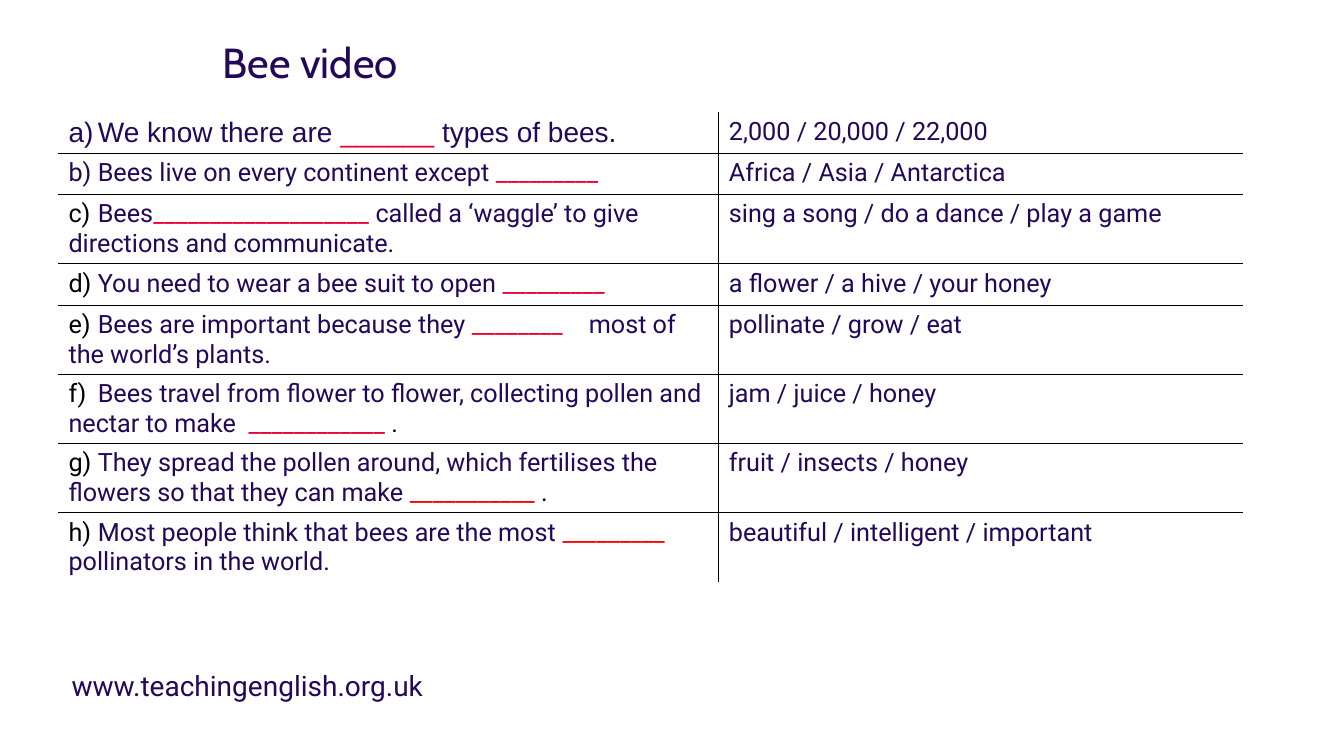
import pptx
import pptx.util
import pptx.dml.color
import pptx.enum.text
import pptx.oxml
import pptx.oxml.ns
from pptx.util import Inches

# Content: each clue is (runs, choices); a run is (text, colour name)
title = "Bee video"
site = "www.teachingenglish.org.uk"
clues = [
    ([("a)\tWe know there are ", "ink"), ("______", "gap"),
      (" types of bees.", "ink")], "2,000 / 20,000 / 22,000"),
    ([("b)\tBees live on every continent except ", "ink"),
      ("_________", "gap")], "Africa / Asia / Antarctica"),
    ([("c)\t", "black"), ("Bees", "ink"), ("___________________", "gap"),
      (" called a ‘waggle’ to give directions and communicate.", "ink")],
     "sing a song / do a dance / play a game"),
    ([("d)\t", "black"), ("You need to wear a bee suit to open ", "ink"),
      ("_________", "gap")], "a flower / a hive / your honey"),
    ([("e)\t", "black"), ("Bees are important because they ", "ink"),
      ("________", "gap"), ("\tmost of the world’s plants.", "ink")],
     "pollinate / grow / eat"),
    ([("f)\t", "black"),
      ("Bees travel from flower to flower, collecting pollen and nectar to make ", "ink"),
      (" ____________ ", "gap"), (".", "black")], "jam / juice / honey"),
    ([("g)\t", "black"),
      ("They spread the pollen around, which fertilises the flowers so that they can make ", "ink"),
      ("___________ ", "red"), (".", "black")], "fruit / insects / honey"),
    ([("h)\t", "black"), ("Most people think that bees are the most ", "ink"),
      ("_________ ", "red"), ("pollinators in the world.", "ink")],
     "beautiful / intelligent / important"),
]

# Theme and layout
theme = {
    "ink": "23085A", "gap": "EA0034", "red": "FF0000", "black": "000000",
    "head": ("Cabin", 30), "first": ("Arial", 20),
    "body": ("Roboto", 18), "foot": ("Roboto", 20),
}
widths = [6.55, 5.2]
height = 0.41
stops = [0.29, 5.16]


def write(para, text, style, tint="ink"):
    run = para.add_run()
    run.text = text
    name, size = theme[style]
    run.font.name = name
    run.font.size = pptx.util.Pt(size)
    run.font.color.rgb = pptx.dml.color.RGBColor.from_string(theme[tint])


def clear(frame, anchor):
    frame.margin_left = frame.margin_right = 0
    frame.margin_top = frame.margin_bottom = 0
    frame.word_wrap = True
    frame.auto_size = pptx.enum.text.MSO_AUTO_SIZE.NONE
    frame.vertical_anchor = anchor


def place(shape, left, top, width, tall):
    shape.left, shape.top = Inches(left), Inches(top)
    shape.width, shape.height = Inches(width), Inches(tall)


def add(parent, tag, **attrs):
    node = pptx.oxml.ns.qn(tag)
    child = parent.makeelement(node, {k: str(v) for k, v in attrs.items()})
    parent.append(child)
    return child


def edge(cell, sides):
    props = cell._tc.get_or_add_tcPr()
    for side in "LRTB":
        line = add(props, "a:ln" + side, w=pptx.util.Pt(1))
        if side in sides:
            fill = add(line, "a:solidFill")
            add(fill, "a:srgbClr", val=theme["black"])
        else:
            add(line, "a:noFill")
    cell.fill.background()


def main():
    deck = pptx.Presentation()
    deck.slide_width, deck.slide_height = Inches(13.33), Inches(7.5)
    slide = deck.slides.add_slide(deck.slide_layouts[5])

    # Title
    head = slide.shapes.title
    place(head, 2.21, 0.4, 11.97, 0.87)
    clear(head.text_frame, pptx.enum.text.MSO_ANCHOR.TOP)
    para = head.text_frame.paragraphs[0]
    para.alignment = pptx.enum.text.PP_ALIGN.LEFT
    para.line_spacing = pptx.util.Pt(33)
    write(para, title, "head")

    # Web address
    foot = slide.shapes.add_textbox(Inches(0.71), Inches(6.77),
                                    Inches(11.42), Inches(0.2))
    clear(foot.text_frame, pptx.enum.text.MSO_ANCHOR.BOTTOM)
    write(foot.text_frame.paragraphs[0], site, "foot")

    # Table of clues and choices
    count = len(clues)
    table = slide.shapes.add_table(count, 2, Inches(0.58), Inches(1.11),
                                   Inches(sum(widths)),
                                   Inches(height * count)).table
    table.first_row = table.horz_banding = False
    for col, width in zip(table.columns, widths):
        col.width = Inches(width)
    for row, (runs, choice) in enumerate(clues):
        table.rows[row].height = Inches(height)
        rules = ("T" if row else "") + ("B" if row < count - 1 else "")
        left, right = table.cell(row, 0), table.cell(row, 1)
        edge(left, rules + "R")
        edge(right, rules + "L")

        para = left.text_frame.paragraphs[0]
        tabs = add(para._p.get_or_add_pPr(), "a:tabLst")
        for stop in stops:
            add(tabs, "a:tab", pos=Inches(stop), algn="l")
        for text, tint in runs:
            write(para, text, "body" if row else "first", tint)
        write(right.text_frame.paragraphs[0], choice, "body")

    deck.save("out.pptx")


if __name__ == "__main__":
    main()
